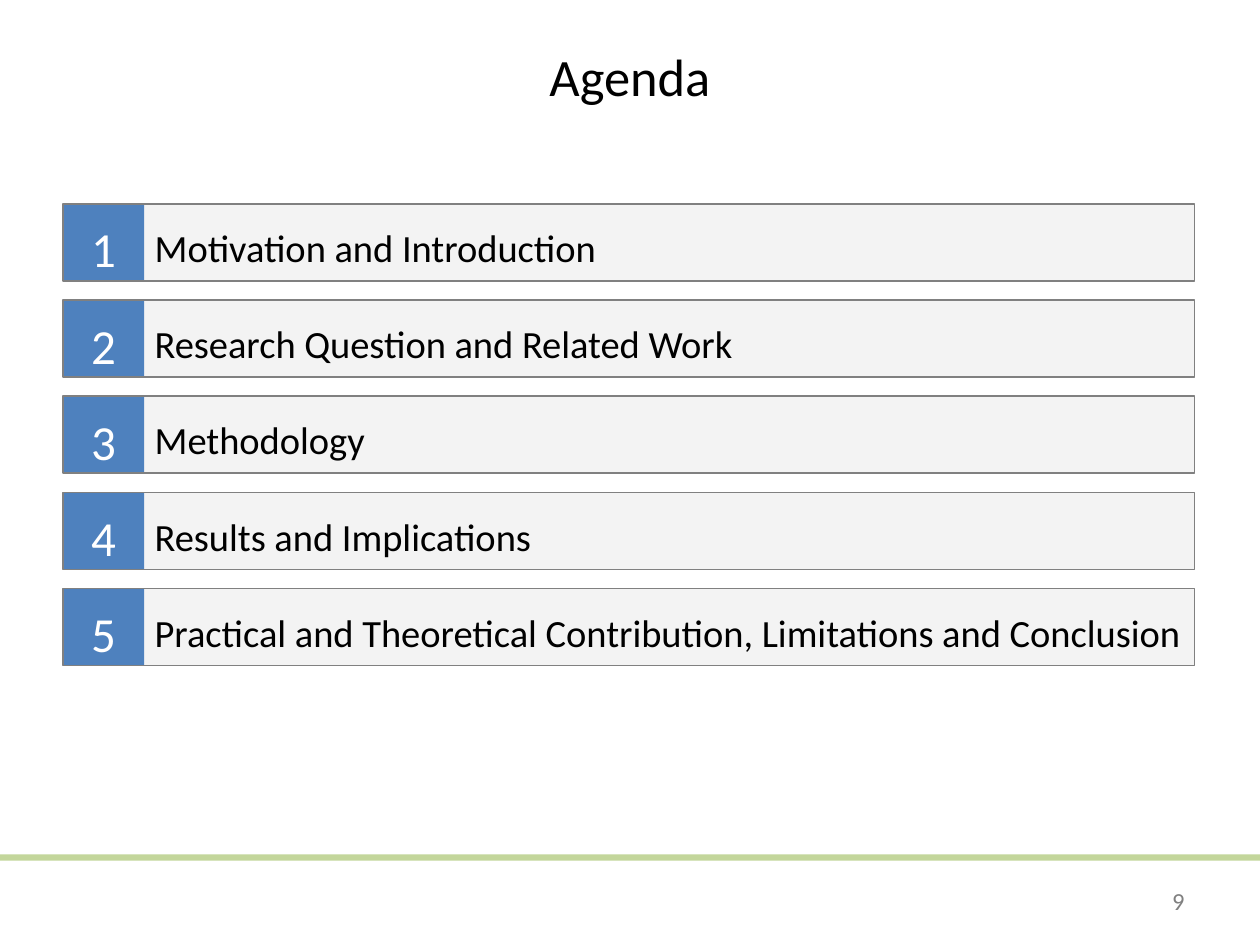
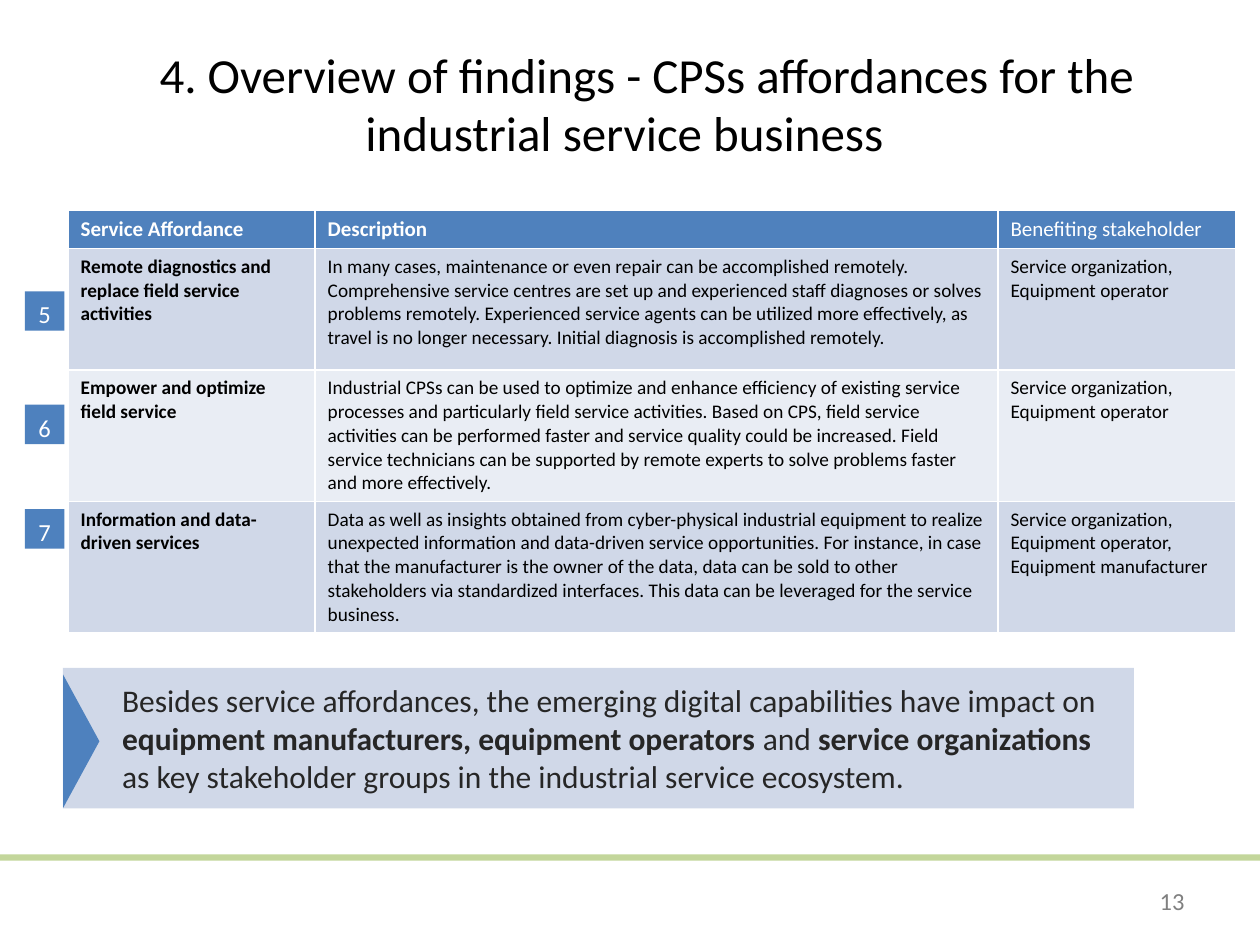
from pptx import Presentation
from pptx.dml.color import RGBColor
from pptx.enum.shapes import MSO_SHAPE
from pptx.enum.text import MSO_ANCHOR, MSO_AUTO_SIZE, PP_ALIGN
from pptx.oxml.ns import qn
from pptx.util import Pt
from lxml.etree import SubElement

FONT = "Calibri"
COLORS = {
    "text": "000000", "white": "FFFFFF", "band": "C3D69B", "gray": "808080",
    "blue": "4E81BE", "panel": "F3F3F3", "header": "4F81BD",
    "row_dark": "D0D8E8", "row_light": "E9EDF4", "callout": "262626",
}
AGENDA = [
    "Motivation and Introduction",
    "Research Question and Related Work",
    "Methodology",
    "Results and Implications",
    "Practical and Theoretical Contribution, Limitations and Conclusion",
]
HEADERS = ["Service Affordance", "Description", "Benefiting stakeholder"]
FINDINGS = [
    ("Remote diagnostics and replace field service activities",
     "In many cases, maintenance or even repair can be accomplished remotely. "
     "Comprehensive service centres are set up and experienced staff diagnoses or solves "
     "problems remotely. Experienced service agents can be utilized more effectively, as "
     "travel is no longer necessary. Initial diagnosis is accomplished remotely.",
     "Service organization,\nEquipment operator"),
    ("Empower and optimize field service",
     "Industrial CPSs can be used to optimize and enhance efficiency of existing service "
     "processes and particularly field service activities. Based on CPS, field service "
     "activities can be performed faster and service quality could be increased. Field "
     "service technicians can be supported by remote experts to solve problems faster "
     "and more effectively.",
     "Service organization,\nEquipment operator"),
    ("Information and data-driven services",
     "Data as well as insights obtained from cyber-physical industrial equipment to realize "
     "unexpected information and data-driven service opportunities. For instance, in case "
     "that the manufacturer is the owner of the data, data can be sold to other "
     "stakeholders via standardized interfaces. This data can be leveraged for the service "
     "business.",
     "Service organization,\nEquipment operator,\nEquipment manufacturer"),
]
CALLOUT = [
    ("Besides service affordances, the emerging digital capabilities have impact on ", False),
    ("equipment manufacturers, equipment operators ", True),
    ("and ", False),
    ("service organizations ", True),
    ("as key stakeholder groups in the industrial service ecosystem.", False),
]


def rgb(name):
    return RGBColor.from_string(COLORS[name])


def add_run(p, text, size, color="text", bold=False):
    r = p.add_run()
    r.text = text
    r.font.name, r.font.size, r.font.bold = FONT, Pt(size), bold
    r.font.color.rgb = rgb(color)


def add_shape(s, left, top, width, height, fill=None, line=None, kind=MSO_SHAPE.RECTANGLE):
    sp = s.shapes.add_shape(kind, Pt(left), Pt(top), Pt(width), Pt(height))
    sp.shadow.inherit = False
    if fill:
        sp.fill.solid()
        sp.fill.fore_color.rgb = rgb(fill)
    else:
        sp.fill.background()
    if line:
        sp.line.color.rgb = rgb(line)
        sp.line.width = Pt(1)
    else:
        sp.line.fill.background()
    return sp


def set_frame(tf, margins, align, anchor=MSO_ANCHOR.MIDDLE, wrap=True):
    tf.margin_left, tf.margin_top, tf.margin_right, tf.margin_bottom = map(Pt, margins)
    tf.vertical_anchor, tf.word_wrap = anchor, wrap
    p = tf.paragraphs[0]
    p.alignment = align
    return p


def add_badge(s, left, top, width, height, number, size):
    sp = add_shape(s, left, top, width, height, "blue")
    p = set_frame(sp.text_frame, (6, 6, 6, 6), PP_ALIGN.CENTER, wrap=False)
    p.line_spacing = 1.2
    add_run(p, str(number), size, "white")


def add_slide(prs, title, size, number, indent=0):
    s = prs.slides.add_slide(prs.slide_layouts[5])
    sp = s.shapes.title
    sp.left, sp.top, sp.width, sp.height = Pt(36), Pt(21.6), Pt(648), Pt(90)
    sp.text_frame.auto_size = MSO_AUTO_SIZE.NONE
    p = set_frame(sp.text_frame, (7.2, 3.6, 7.2, 3.6), PP_ALIGN.CENTER, MSO_ANCHOR.TOP)
    p._p.get_or_add_pPr().set("indent", str(Pt(indent)))
    add_run(p, title, size)
    add_shape(s, 0, 488.2, 720, 3.6, "band")
    tb = s.shapes.add_textbox(Pt(516), Pt(500.4), Pt(168), Pt(28.8))
    p = set_frame(tb.text_frame, (7.2, 3.6, 7.2, 3.6), PP_ALIGN.RIGHT)
    add_run(p, str(number), 14, "gray")
    return s


def add_agenda(s, left, top, width, row_height=44, pitch=54.95, badge_width=46.4):
    for i, topic in enumerate(AGENDA):
        y = top + i * pitch
        sp = add_shape(s, left + badge_width, y, width - badge_width, row_height, "panel")
        p = set_frame(sp.text_frame, (6, 3, 6, 3), PP_ALIGN.LEFT)
        p.line_spacing = 1.2
        add_run(p, topic, 22)
        add_badge(s, left, y, badge_width, row_height, i + 1, 28)
        add_shape(s, left, y, width, row_height, line="gray")


def fill_cell(cell, text, fill, size, color, bold):
    tcPr = cell._tc.get_or_add_tcPr()
    for side in ("lnL", "lnR", "lnT", "lnB"):
        ln = SubElement(tcPr, qn(f"a:{side}"), w=str(Pt(1)))
        solid = SubElement(ln, qn("a:solidFill"))
        SubElement(solid, qn("a:srgbClr"), val=COLORS["white"])
    cell.fill.solid()
    cell.fill.fore_color.rgb = rgb(fill)
    tf = cell.text_frame
    for i, line in enumerate(text.split("\n")):
        p = tf.add_paragraph() if i else tf.paragraphs[0]
        add_run(p, line, size, color, bold)


def add_findings(s, left, top):
    widths, heights = (141.2, 390.2, 136), (21.2, 69.5, 75, 75)
    table = s.shapes.add_table(len(heights), len(widths), Pt(left), Pt(top),
                               Pt(sum(widths)), Pt(sum(heights))).table
    table.horz_banding = False
    for column, width in zip(table.columns, widths):
        column.width = Pt(width)
    for row, height in zip(table.rows, heights):
        row.height = Pt(height)
    for j, text in enumerate(HEADERS):
        fill_cell(table.cell(0, j), text, "header", 12, "white", j < 2)
    for i, finding in enumerate(FINDINGS):
        fill = "row_light" if i % 2 else "row_dark"
        for j, text in enumerate(finding):
            fill_cell(table.cell(i + 1, j), text, fill, 11, "text", j == 0)
    for number, offset in enumerate((46.1, 110.9, 170.6), 5):
        add_badge(s, left - 24.6, top + offset, 22.5, 22.5, number, 14)


def add_callout(s, left, top, width, height):
    sp = add_shape(s, left, top, width, height, "row_dark")
    p = set_frame(sp.text_frame, (33.8, 3.6, 7.2, 3.6), PP_ALIGN.LEFT)
    for text, bold in CALLOUT:
        add_run(p, text, 18, "callout", bold)
    base, depth = 76.4, 20.8
    arrow = add_shape(s, left + (depth - base) / 2, top + 42 - depth / 2, base, depth,
                      "blue", kind=MSO_SHAPE.ISOSCELES_TRIANGLE)
    arrow.rotation = 90


def main():
    prs = Presentation()
    prs.slide_width, prs.slide_height = Pt(720), Pt(540)
    s = add_slide(prs, "Agenda", 30, 9)
    add_agenda(s, 36, 116.6, 646.6)
    s = add_slide(prs, "4. Overview of findings - CPSs affordances for the "
                  "industrial service business ", 28, 13, indent=19)
    add_findings(s, 38.9, 120.4)
    add_callout(s, 36, 381.6, 612, 80.4)
    prs.save("out.pptx")


if __name__ == "__main__":
    main()
